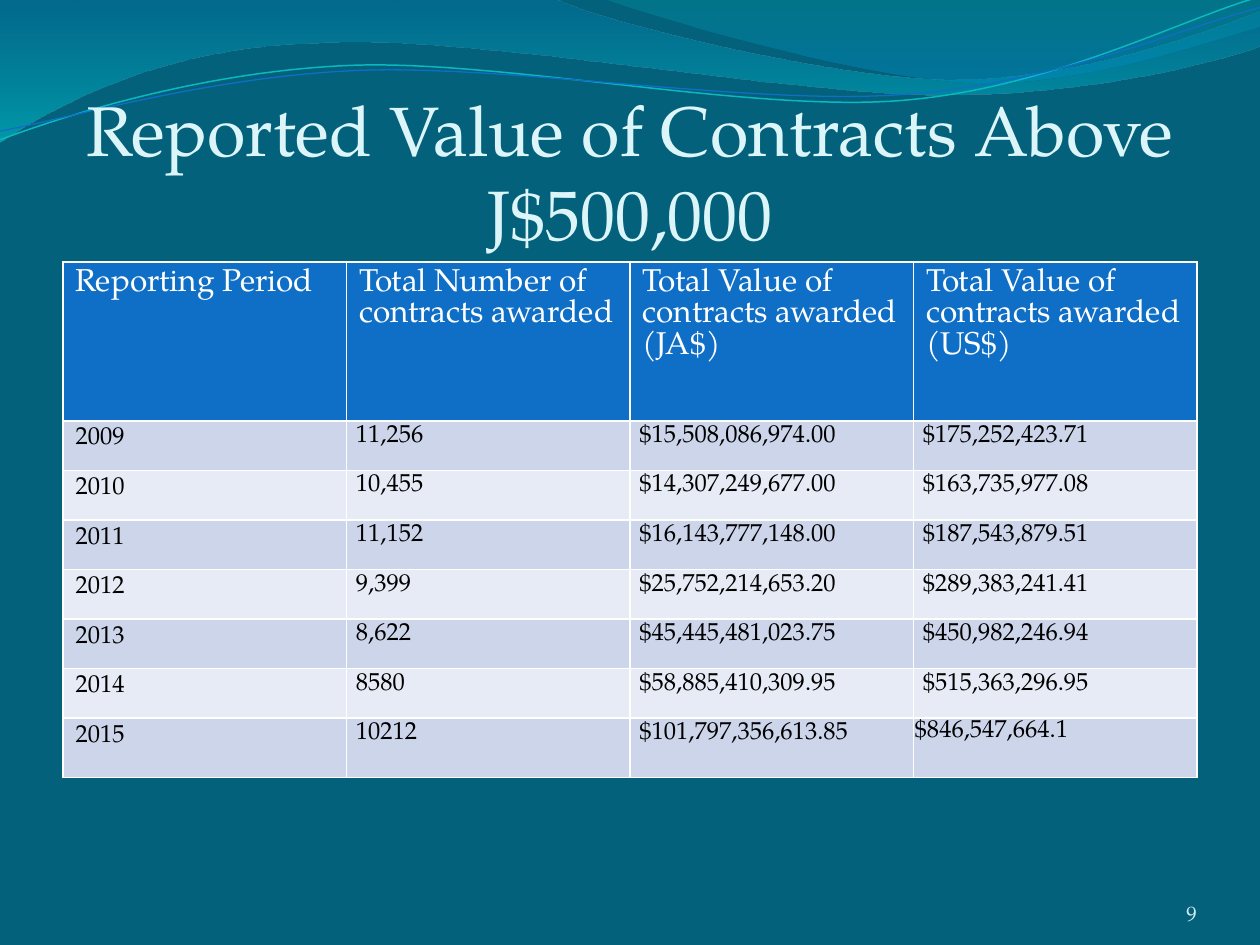
from dataclasses import dataclass

from lxml.etree import SubElement
from pptx import Presentation
from pptx.dml.color import RGBColor
from pptx.enum.text import MSO_ANCHOR as Anchor, PP_ALIGN as Align
from pptx.oxml.ns import qn
from pptx.util import Inches, Pt


@dataclass(frozen=True)
class Theme:
    """Colours, font and type sizes of the slide."""
    font: str = "TeX Gyre Pagella"
    background: str = "04617B"
    title: str = "DBF5F9"
    number: str = "D1EAEE"
    header: str = "0F6FC6"
    teal: str = "0AB8BF"
    bands: tuple = ("CCD5EA", "E7EBF5")
    white: str = "FFFFFF"
    black: str = "000000"
    title_size: int = 40
    header_size: int = 18
    body_size: int = 14
    number_size: int = 12


THEME = Theme()

WAVES = [
    ([(0, 0), (4.4, -0.01), (4.76, 0.17, 6.64, 0.63, 7.58, 0.63),
      (8.53, 0.63, 9.58, 0.26, 10, 0.09), (10.01, 0.36),
      (9.83, 0.44, 8.7, 0.76, 7.46, 0.75), (6.22, 0.75, 3.82, 0.28, 2.57, 0.34),
      (1.29, 0.36, 0.46, 0.83, -0.01, 1.13), (0, 0)],
     [(0, "0074A1", 45), (1, "00C6CF", 55)]),
    ([(4.79, -0.01), (5.09, 0.11, 6.82, 0.62, 7.69, 0.65),
      (8.56, 0.69, 9.61, 0.32, 10, 0.21), (10, 0), (4.79, -0.01)],
     [(0, "00A1A9", 30), (0.8, "008BBF", 45)]),
]
STRANDS = [
    ([(0, 1.11), (0.48, 0.93, 1.58, 0.57, 2.77, 0.52), (3.95, 0.47, 5.93, 0.89, 7.13, 0.8),
      (8.33, 0.71, 9.38, 0.15, 9.98, -0.02)], THEME.teal, 0.85),
    ([(0, 1.04), (0.47, 0.96, 1.64, 0.61, 2.83, 0.56), (4.03, 0.51, 5.97, 0.84, 7.17, 0.75),
      (8.36, 0.67, 9.41, 0.21, 10, 0.06)], THEME.header, 0.75),
]
HEADINGS = ["Reporting Period", "Total Number of contracts awarded",
            "Total Value of contracts awarded (JA$)", "Total Value of contracts awarded (US$)"]
CONTRACTS = [
    ("2009", "11,256", "$15,508,086,974.00", "$175,252,423.71"),
    ("2010", "10,455", "$14,307,249,677.00", "$163,735,977.08"),
    ("2011", "11,152", "$16,143,777,148.00", "$187,543,879.51"),
    ("2012", "9,399", "$25,752,214,653.20", "$289,383,241.41"),
    ("2013", "8,622", "$45,445,481,023.75", "$450,982,246.94"),
    ("2014", "8580", "$58,885,410,309.95", "$515,363,296.95"),
    ("2015", "10212", "$101,797,356,613.85", "$846,547,664.1"),
]


def rgb(color):
    """Return the colour object of a hex string."""
    return RGBColor.from_string(color)


def add_outline(slide, left, top, segments, close):
    """Draw an outline of lines (one point) and cubic curves (three points)."""
    start, *others = [(left + Inches(x), top + Inches(y)) for segment in segments
                      for x, y in zip(segment[::2], segment[1::2])]
    builder = slide.shapes.build_freeform(*start)
    builder.add_line_segments(others, close=close)
    shape = builder.convert_to_shape()
    shape.shadow.inherit = False
    lines = shape.element.spPr.iter(qn("a:lnTo"))
    pending = iter(list(lines))
    for segment in segments[1:]:
        curve = next(pending)
        if len(segment) == 6:
            curve.tag = qn("a:cubicBezTo")
            for line in (next(pending), next(pending)):
                curve.append(line[0])
                line.getparent().remove(line)
    return shape


def add_waves(slide, left, top):
    """Draw the translucent waves and the thin strands across the top."""
    for segments, stops in WAVES:
        shape = add_outline(slide, left, top, segments, True)
        shape.line.fill.background()
        shape.fill.gradient()
        shape.fill.gradient_angle = 270
        for stop, (position, color, _) in zip(shape.fill.gradient_stops, stops):
            stop.position = position
            stop.color.rgb = rgb(color)
        colors = shape.element.spPr.iter(qn("a:srgbClr"))
        for color, (_, _, opacity) in zip(colors, stops):
            SubElement(color, qn("a:alpha"), val=str(opacity * 1000))
    for segments, color, width in STRANDS:
        shape = add_outline(slide, left, top, segments, False)
        shape.fill.background()
        shape.line.color.rgb = rgb(color)
        shape.line.width = Pt(width)


def write(text_frame, text, size, color, align=None, spacing=None):
    """Fill a text frame with one formatted paragraph."""
    text_frame.text = text
    paragraph = text_frame.paragraphs[0]
    paragraph.alignment = align
    paragraph.line_spacing = spacing
    font = paragraph.runs[0].font
    font.name, font.size, font.color.rgb = THEME.font, Pt(size), rgb(color)


def add_label(slide, left, top, width, height, text, size, color, align, margin_top=0):
    """Place bottom-anchored text in a box."""
    text_frame = slide.shapes.add_textbox(left, top, width, height).text_frame
    text_frame.word_wrap = True
    text_frame.vertical_anchor = Anchor.BOTTOM
    text_frame.margin_left = text_frame.margin_right = text_frame.margin_bottom = 0
    text_frame.margin_top = margin_top
    write(text_frame, text, size, color, align)


def set_margins(cell, side, top):
    """Set the inner margins of a cell, with none at the bottom."""
    cell.margin_left = cell.margin_right = side
    cell.margin_top, cell.margin_bottom = top, 0


def style_cell(cell, fill):
    """Give a cell thin white borders and a solid fill."""
    properties = cell._tc.get_or_add_tcPr()
    for side in ("lnL", "lnR", "lnT", "lnB"):
        line = SubElement(properties, qn(f"a:{side}"), w=str(Pt(1)))
        SubElement(SubElement(line, qn("a:solidFill")), qn("a:srgbClr"), val=THEME.white)
    cell.fill.solid()
    cell.fill.fore_color.rgb = rgb(fill)


def add_contract_table(slide, left, top, width, height):
    """Place the table of contracts awarded in each reporting period."""
    rows, columns = len(CONTRACTS) + 1, len(HEADINGS)
    table = slide.shapes.add_table(rows, columns, left, top, width, height).table
    header_height, last_height = Inches(1.26), Inches(0.47)
    for row in table.rows:
        row.height = (height - header_height - last_height) // (rows - 2)
    table.rows[0].height = header_height
    table.rows[rows - 1].height = last_height
    for column, heading in enumerate(HEADINGS):
        table.columns[column].width = width // columns
        cell = table.cell(0, column)
        style_cell(cell, THEME.header)
        write(cell.text_frame, heading, THEME.header_size, THEME.white)
    for row, record in enumerate(CONTRACTS, 1):
        for column, value in enumerate(record):
            cell = table.cell(row, column)
            style_cell(cell, THEME.bands[(row - 1) % 2])
            align = spacing = None
            if (row, column) == (rows - 1, columns - 1):
                set_margins(cell, Inches(0.01), Inches(0.01))
            elif column:
                set_margins(cell, Inches(0.15) // 2, 0)
                align, spacing = Align.JUSTIFY, 1.15
            write(cell.text_frame, value, THEME.body_size, THEME.black, align, spacing)


def main():
    """Build and save the slide."""
    presentation = Presentation()
    presentation.slide_width, presentation.slide_height = Inches(10), Inches(7.5)
    slide = presentation.slides.add_slide(presentation.slide_layouts[6])
    slide.background.fill.solid()
    slide.background.fill.fore_color.rgb = rgb(THEME.background)
    add_waves(slide, 0, 0)
    add_label(slide, Inches(0.5), Inches(0.77), Inches(9), Inches(1.25),
              "Reported Value of Contracts Above J$500,000",
              THEME.title_size, THEME.title, Align.CENTER, Inches(0.05))
    add_label(slide, Inches(8.67), Inches(6.95), Inches(0.83), Inches(0.4),
              "9", THEME.number_size, THEME.number, Align.RIGHT)
    add_contract_table(slide, Inches(0.5), Inches(2.08), Inches(9), Inches(4.09))
    presentation.save("out.pptx")


if __name__ == "__main__":
    main()
